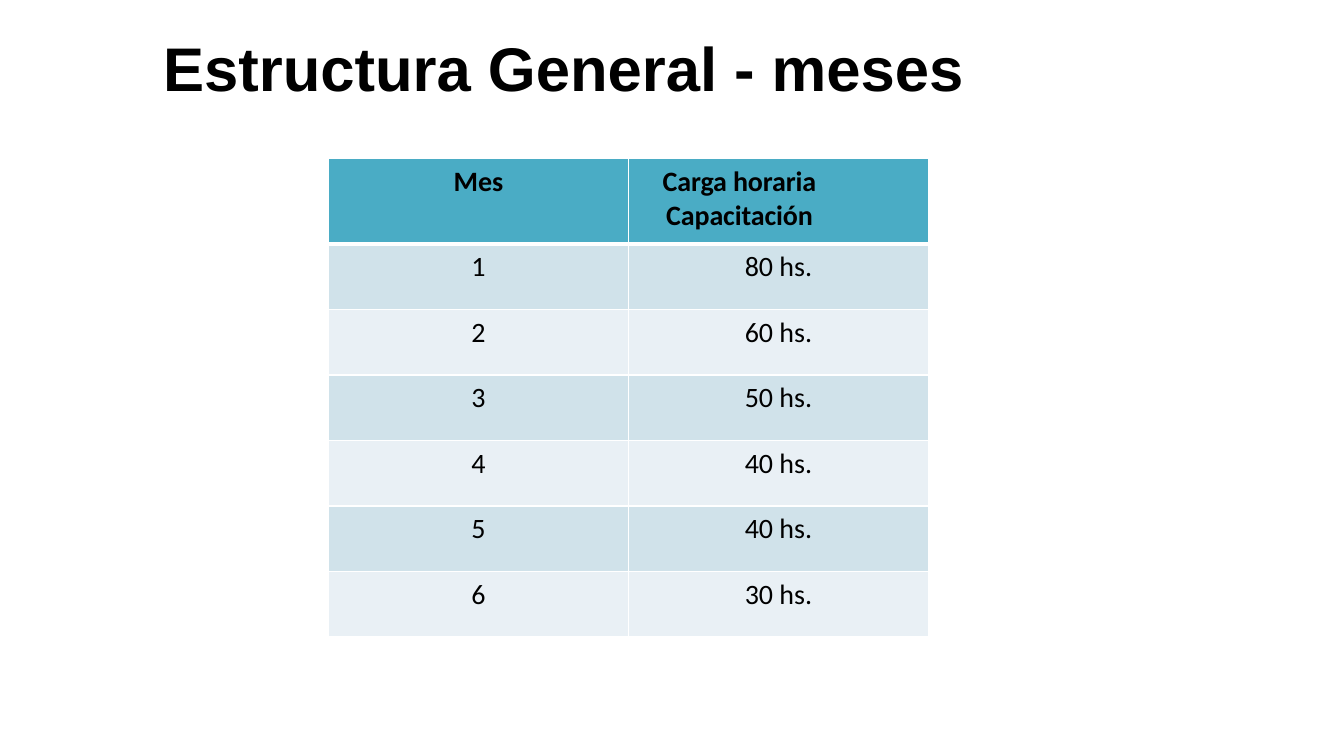
from lxml import etree
from pptx import Presentation
from pptx.dml.color import RGBColor
from pptx.enum import text
from pptx.oxml import ns
from pptx.util import Cm, Pt

TITLE = "Estructura General - meses"
HEADINGS = ("Mes", "Carga horaria Capacitación")
HOURS_BY_MONTH = (80, 60, 50, 40, 40, 30)
COLORS = {
    "text": "000000",
    "heading": "4AACC5",
    "odd": "D0E2EA",
    "even": "E9F0F5",
    "border": "FFFFFF",
}
COLUMN_WIDTH = Cm(7.56)
HEADING_HEIGHT, MONTH_HEIGHT = Cm(2.16), Cm(1.65)


def style_font(paragraph, name, size, bold):
    font = paragraph.runs[0].font
    font.name, font.size, font.bold = name, Pt(size), bold
    font.color.rgb = RGBColor.from_string(COLORS["text"])


def add_borders(cell, row):
    """Thin lines all round, with a thick one between headings and months."""
    properties = cell._tc.get_or_add_tcPr()
    for side in "LRTB":
        thick = (row, side) in ((0, "B"), (1, "T"))
        line = etree.SubElement(properties, ns.qn(f"a:ln{side}"), w=str(Pt(3 if thick else 1)))
        fill = etree.SubElement(line, ns.qn("a:solidFill"))
        etree.SubElement(fill, ns.qn("a:srgbClr"), val=COLORS["border"])


def add_title(slide):
    title = slide.shapes.add_textbox(Cm(3.86), Cm(0.61), Cm(27.69), Cm(2.39))
    frame = title.text_frame
    frame.word_wrap = True
    frame.vertical_anchor = text.MSO_ANCHOR.MIDDLE
    frame.text = TITLE
    frame.paragraphs[0].line_spacing = 0.9
    style_font(frame.paragraphs[0], "Arial", 44, True)


def add_schedule(slide):
    rows = [HEADINGS] + [(str(month), f"{hours} hs.")
                         for month, hours in enumerate(HOURS_BY_MONTH, 1)]
    height = HEADING_HEIGHT + MONTH_HEIGHT * len(HOURS_BY_MONTH)
    schedule = slide.shapes.add_table(len(rows), len(HEADINGS), Cm(8.28), Cm(3.99),
                                      COLUMN_WIDTH * len(HEADINGS), height).table
    schedule.first_row = schedule.horz_banding = False
    for row, values in enumerate(rows):
        schedule.rows[row].height = MONTH_HEIGHT if row else HEADING_HEIGHT
        band = "heading" if row == 0 else "odd" if row % 2 else "even"
        for column, value in enumerate(values):
            cell = schedule.cell(row, column)
            cell.margin_left = cell.margin_right = cell.margin_bottom = 0
            cell.margin_top = Cm(0.15)
            add_borders(cell, row)
            cell.fill.solid()
            cell.fill.fore_color.rgb = RGBColor.from_string(COLORS[band])
            cell.text_frame.text = value
            paragraph = cell.text_frame.paragraphs[0]
            paragraph.alignment = text.PP_ALIGN.CENTER
            style_font(paragraph, "Calibri", 20, row == 0)

    hours_heading = schedule.cell(0, 1).text_frame.paragraphs[0]
    hours_heading.alignment = text.PP_ALIGN.LEFT
    indents = hours_heading._p.get_or_add_pPr()
    indents.set("marL", str(Cm(0.95)))
    indents.set("indent", str(Cm(-0.09)))
    hours_heading.runs[0]._r.get_or_add_rPr().set("spc", "-10")


def main():
    deck = Presentation()
    deck.slide_width, deck.slide_height = Cm(33.87), Cm(19.05)
    slide = deck.slides.add_slide(deck.slide_layouts[6])
    add_title(slide)
    add_schedule(slide)
    deck.save("out.pptx")


if __name__ == "__main__":
    main()
